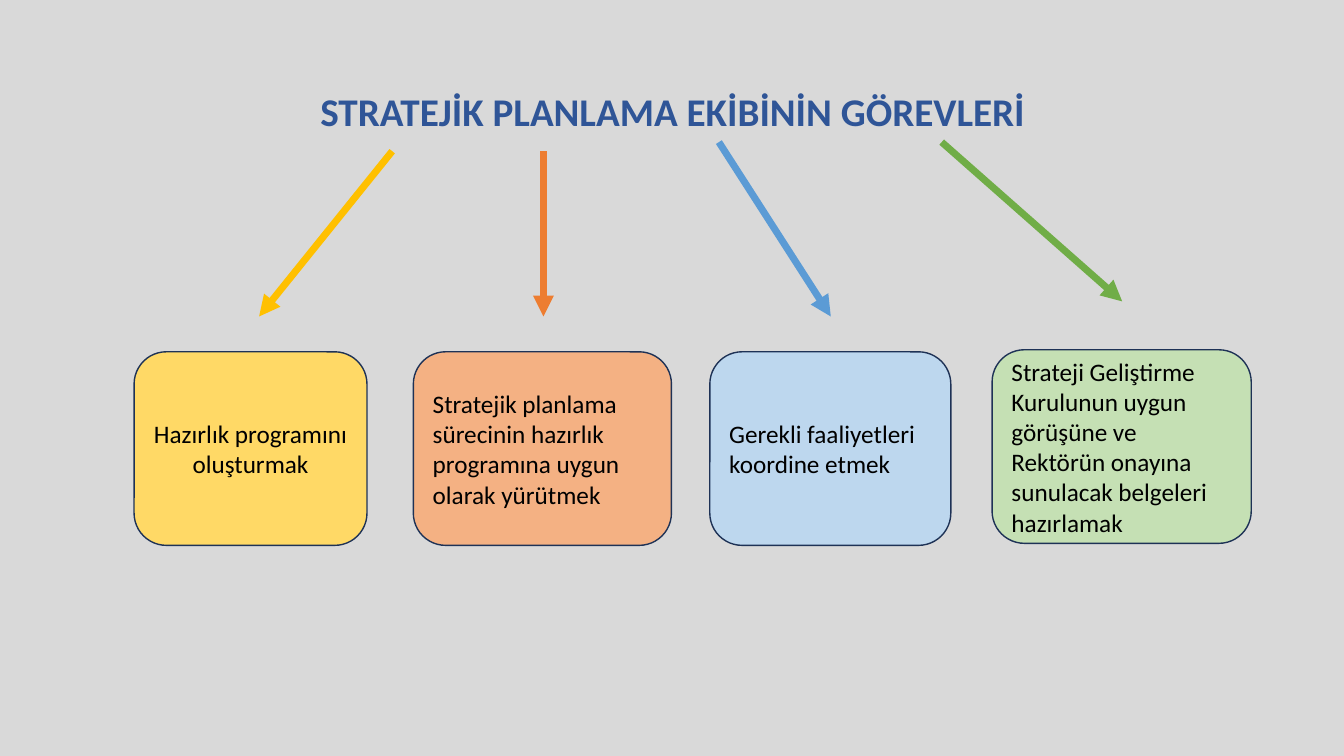
from lxml import etree
from pptx import Presentation
from pptx.dml.color import RGBColor
from pptx.enum import shapes, text
from pptx.oxml import ns
from pptx.util import Inches, Pt

BACKGROUND = RGBColor(0xD9, 0xD9, 0xD9)
TITLE_BLUE = RGBColor(0x2F, 0x55, 0x97)
OUTLINE = RGBColor(0x1E, 0x32, 0x56)
BLACK = RGBColor(0, 0, 0)
YELLOW, LIGHT_YELLOW = RGBColor(0xFF, 0xC0, 0x00), RGBColor(0xFF, 0xD9, 0x66)
ORANGE, LIGHT_ORANGE = RGBColor(0xED, 0x7D, 0x31), RGBColor(0xF4, 0xB1, 0x83)
BLUE, LIGHT_BLUE = RGBColor(0x5B, 0x9B, 0xD5), RGBColor(0xBD, 0xD7, 0xEE)
GREEN, LIGHT_GREEN = RGBColor(0x70, 0xAD, 0x47), RGBColor(0xC5, 0xE0, 0xB4)

LEFT, CENTER = text.PP_ALIGN.LEFT, text.PP_ALIGN.CENTER
DUTY_HEIGHT = 1.92

# Text, alignment, box (left, top, width), box fill, arrow start, arrow end, arrow colour
DUTIES = [
    ("Hazırlık programını oluşturmak", CENTER,
     (1.33, 3.49, 2.31), LIGHT_YELLOW, (3.89, 1.5), (2.57, 3.14), YELLOW),
    ("Stratejik planlama sürecinin hazırlık programına uygun olarak yürütmek", LEFT,
     (4.1, 3.49, 2.56), LIGHT_ORANGE, (5.39, 1.5), (5.39, 3.14), ORANGE),
    ("Gerekli faaliyetleri koordine etmek", LEFT,
     (7.04, 3.49, 2.39), LIGHT_BLUE, (7.13, 1.41), (8.24, 3.14), BLUE),
    ("Strateji Geliştirme Kurulunun uygun görüşüne ve Rektörün onayına "
     "sunulacak belgeleri hazırlamak", LEFT,
     (9.84, 3.47, 2.57), LIGHT_GREEN, (9.34, 1.41), (11.13, 2.99), GREEN),
]


def write(sp, words, size, color, bold=False, align=LEFT, spacing=1.0):
    tf = sp.text_frame
    tf.word_wrap = True
    tf.auto_size = text.MSO_AUTO_SIZE.NONE
    tf.vertical_anchor = text.MSO_ANCHOR.MIDDLE
    p = tf.paragraphs[0]
    p.alignment = align
    p.line_spacing = spacing
    r = p.add_run()
    r.text = words
    r.font.name = "Calibri"
    r.font.size = Pt(size)
    r.font.bold = bold
    r.font.color.rgb = color


def add_title(s, left, top, width, height):
    sp = s.shapes.title
    sp.left, sp.top = Inches(left), Inches(top)
    sp.width, sp.height = Inches(width), Inches(height)
    write(sp, "STRATEJİK PLANLAMA EKİBİNİN GÖREVLERİ", 28, TITLE_BLUE,
          bold=True, align=CENTER, spacing=0.9)


def add_duty(s, words, align, left, top, width, fill):
    sp = s.shapes.add_shape(shapes.MSO_SHAPE.ROUNDED_RECTANGLE, Inches(left),
                            Inches(top), Inches(width), Inches(DUTY_HEIGHT))
    sp.shadow.inherit = False
    sp.fill.solid()
    sp.fill.fore_color.rgb = fill
    sp.line.color.rgb = OUTLINE
    sp.line.width = Pt(1)
    write(sp, words, 18, BLACK, align=align)


def add_arrow(s, start, end, color):
    arrow = s.shapes.add_connector(shapes.MSO_CONNECTOR.STRAIGHT,
                                   *map(Inches, start + end))
    arrow.line.color.rgb = color
    arrow.line.width = Pt(5)
    etree.SubElement(arrow.line._get_or_add_ln(), ns.qn("a:tailEnd"), type="triangle")
    etree.SubElement(arrow._element.spPr, ns.qn("a:effectLst"))


def build_duties_slide(prs):
    s = prs.slides.add_slide(prs.slide_layouts.get_by_name("Title Only"))
    s.background.fill.solid()
    s.background.fill.fore_color.rgb = BACKGROUND
    add_title(s, 0.92, 0.4, 11.5, 1.45)
    for words, align, box, fill, *_ in DUTIES:
        add_duty(s, words, align, *box, fill)
    for *_, start, end, color in DUTIES:
        add_arrow(s, start, end, color)


def main():
    prs = Presentation()
    prs.slide_width, prs.slide_height = Inches(13.33), Inches(7.5)
    build_duties_slide(prs)
    prs.save("out.pptx")


if __name__ == "__main__":
    main()
